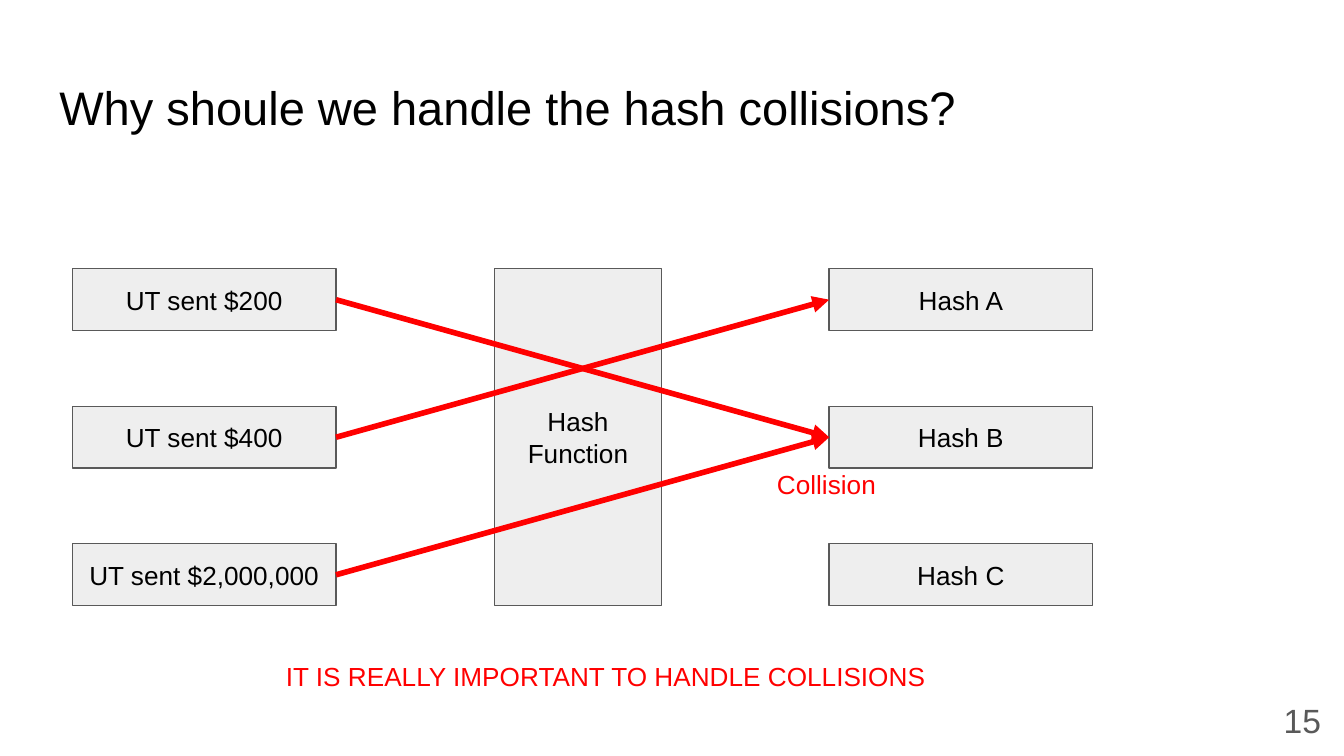
from lxml import etree
from pptx import Presentation
from pptx.dml.color import RGBColor
from pptx.enum.shapes import MSO_CONNECTOR, MSO_SHAPE
from pptx.enum.text import MSO_ANCHOR, PP_ALIGN
from pptx.oxml.ns import qn
from pptx.util import Cm, Pt

RECTANGLE = MSO_SHAPE.RECTANGLE
STRAIGHT = MSO_CONNECTOR.STRAIGHT
TOP, MIDDLE = MSO_ANCHOR.TOP, MSO_ANCHOR.MIDDLE
LEFT, CENTER = PP_ALIGN.LEFT, PP_ALIGN.CENTER

BLACK, GRAY, LIGHT, RED = "000000", "595959", "EEEEEE", "FF0000"
LEFT_SIDE, RIGHT_SIDE = 1, 3
TOP_ROW, ROW_STEP = 5.08, 2.6
BOX_WIDTH, BOX_HEIGHT = 4.98, 1.17


def color(value):
    return RGBColor.from_string(value)


def write(shape, lines, size=14, ink=BLACK, align=CENTER, anchor=MIDDLE):
    frame = shape.text_frame
    frame.word_wrap = True
    frame.vertical_anchor = anchor
    frame.margin_left = frame.margin_right = Cm(0.25)
    frame.margin_top = frame.margin_bottom = Cm(0.25)
    for index, line in enumerate(lines):
        para = frame.add_paragraph() if index else frame.paragraphs[0]
        para.alignment = align
        span = para.add_run()
        span.text = line
        span.font.name = "Arial"
        span.font.size = Pt(size)
        span.font.color.rgb = color(ink)


deck = Presentation()
deck.slide_width, deck.slide_height = Cm(25.4), Cm(14.29)
page = deck.slides.add_slide(deck.slide_layouts[5])

# Title
title = page.shapes.title
title.left, title.top, title.width, title.height = Cm(0.87), Cm(1.24), Cm(23.67), Cm(1.59)
write(title, ["Why shoule we handle the hash collisions?"], 25.2, align=LEFT, anchor=TOP)

# Boxes: messages, hashes and the function between them
messages = ["UT sent $200", "UT sent $400", "UT sent $2,000,000"]
hashes = ["Hash A", "Hash B", "Hash C"]
layout = []
for left, labels in ((1.37, messages), (15.67, hashes)):
    for row, label in enumerate(labels):
        layout.append((left, TOP_ROW + row * ROW_STEP, BOX_WIDTH, BOX_HEIGHT, [label]))
layout.append((9.35, TOP_ROW, 3.15, 2 * ROW_STEP + BOX_HEIGHT, ["Hash", "Function"]))

boxes = []
for left, top, width, height, lines in layout:
    box = page.shapes.add_shape(RECTANGLE, Cm(left), Cm(top), Cm(width), Cm(height))
    box.shadow.inherit = False
    box.fill.solid()
    box.fill.fore_color.rgb = color(LIGHT)
    box.line.color.rgb = color(GRAY)
    box.line.width = Pt(0.75)
    write(box, lines)
    boxes.append(box)
message_boxes, hash_boxes = boxes[:3], boxes[3:6]

# Arrows from each message to its hash
for source, target in ((0, 1), (1, 0), (2, 1)):
    arrow = page.shapes.add_connector(STRAIGHT, 0, 0, 0, 0)
    arrow.begin_connect(message_boxes[source], RIGHT_SIDE)
    arrow.end_connect(hash_boxes[target], LEFT_SIDE)
    arrow.line.color.rgb = color(RED)
    arrow.line.width = Pt(3)
    etree.SubElement(arrow.line._get_or_add_ln(), qn("a:tailEnd"), type="triangle")
    etree.SubElement(arrow._element.spPr, qn("a:effectLst"))

# Red remarks and page number
for left, top, width, height, text, size, ink, anchor in (
    (13.13, 8.56, BOX_WIDTH, BOX_HEIGHT, "Collision", 14, RED, MIDDLE),
    (4.06, 12.19, 14.78, BOX_HEIGHT, "IT IS REALLY IMPORTANT TO HANDLE COLLISIONS", 14, RED, MIDDLE),
    (23.93, 12.98, 1.37, 1.27, "15", 18, GRAY, TOP),
):
    note = page.shapes.add_textbox(Cm(left), Cm(top), Cm(width), Cm(height))
    write(note, [text], size, ink, anchor=anchor)

deck.save("out.pptx")
